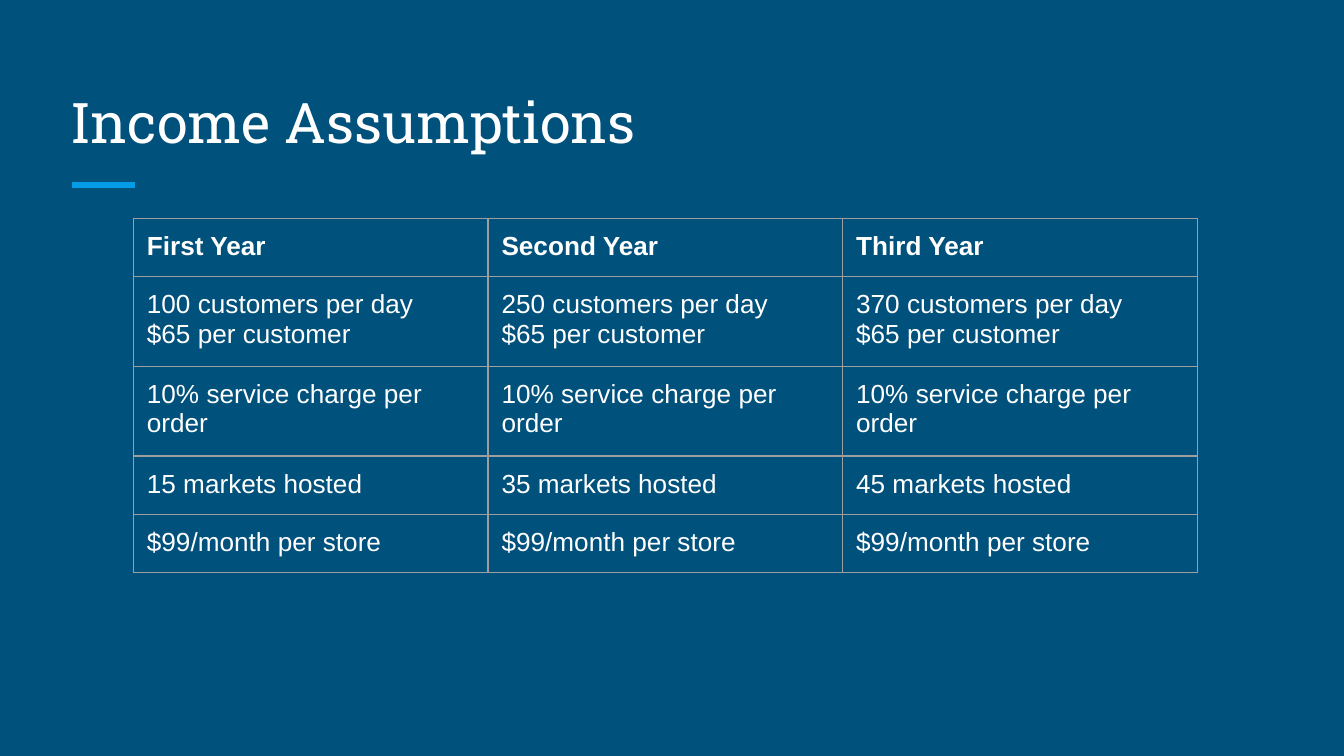
from lxml.etree import SubElement
from pptx import Presentation
from pptx.dml.color import RGBColor
from pptx.enum.shapes import MSO_CONNECTOR
from pptx.enum.text import MSO_ANCHOR
from pptx.oxml import parse_xml
from pptx.oxml.ns import nsdecls, qn
from pptx.util import Pt

COLORS = {"background": "00517C", "accent": "039BE5", "text": "FFFFFF", "border": "9E9E9E"}
INSET = Pt(7.2)


def style_text(text_frame, font_name, size, bold=False):
    for paragraph in text_frame.paragraphs:
        for run in paragraph.runs:
            run.font.name = font_name
            run.font.size = Pt(size)
            run.font.bold = bold
            run.font.color.rgb = RGBColor.from_string(COLORS["text"])


def add_borders(cell, width):
    properties = cell._tc.get_or_add_tcPr()
    for index, side in enumerate(("lnL", "lnR", "lnT", "lnB")):
        border = parse_xml(
            f'<a:{side} {nsdecls("a")} w="{width}"><a:solidFill>'
            f'<a:srgbClr val="{COLORS["border"]}"/></a:solidFill></a:{side}>'
        )
        properties.insert(index, border)


presentation = Presentation()
presentation.slide_width = Pt(720)
presentation.slide_height = Pt(405)
slide = presentation.slides.add_slide(presentation.slide_layouts[6])
slide.background.fill.solid()
slide.background.fill.fore_color.rgb = RGBColor.from_string(COLORS["background"])

# Accent line below the title
accent = slide.shapes.add_connector(
    MSO_CONNECTOR.STRAIGHT, Pt(38.6), Pt(99.1), Pt(72.2), Pt(99.1))
accent.line.color.rgb = RGBColor.from_string(COLORS["accent"])
accent.line.width = Pt(3)
SubElement(accent._element.spPr, qn("a:effectLst"))

# Title
title = slide.shapes.add_textbox(Pt(30.5), Pt(36), Pt(659), Pt(54))
title_frame = title.text_frame
title_frame.word_wrap = True
title_frame.vertical_anchor = MSO_ANCHOR.BOTTOM
title_frame.margin_left = title_frame.margin_right = INSET
title_frame.margin_top = title_frame.margin_bottom = INSET
title_frame.text = "Income Assumptions"
style_text(title_frame, "Roboto Slab", 30)

# Table: what changes by year, then the rows built from it
years = [("First", 100, 15), ("Second", 250, 35), ("Third", 370, 45)]
rows = [
    [f"{name} Year" for name, customers, markets in years],
    [f"{customers} customers per day\n$65 per customer" for name, customers, markets in years],
    ["10% service charge per order"] * len(years),
    [f"{markets} markets hosted" for name, customers, markets in years],
    ["$99/month per store"] * len(years),
]
table = slide.shapes.add_table(
    len(rows), len(years), Pt(71.5), Pt(117), Pt(570), Pt(150)).table
table.first_row = False
table.horz_banding = False
for column in table.columns:
    column.width = Pt(190)

for row_index, texts in enumerate(rows):
    table.rows[row_index].height = Pt(30)
    for column_index, text in enumerate(texts):
        cell = table.cell(row_index, column_index)
        cell.text_frame.text = text
        style_text(cell.text_frame, "Arial", 14, bold=row_index == 0)
        cell.margin_left = cell.margin_right = INSET
        cell.margin_top = cell.margin_bottom = INSET
        cell.fill.background()
        add_borders(cell, Pt(0.75))

presentation.save("out.pptx")
